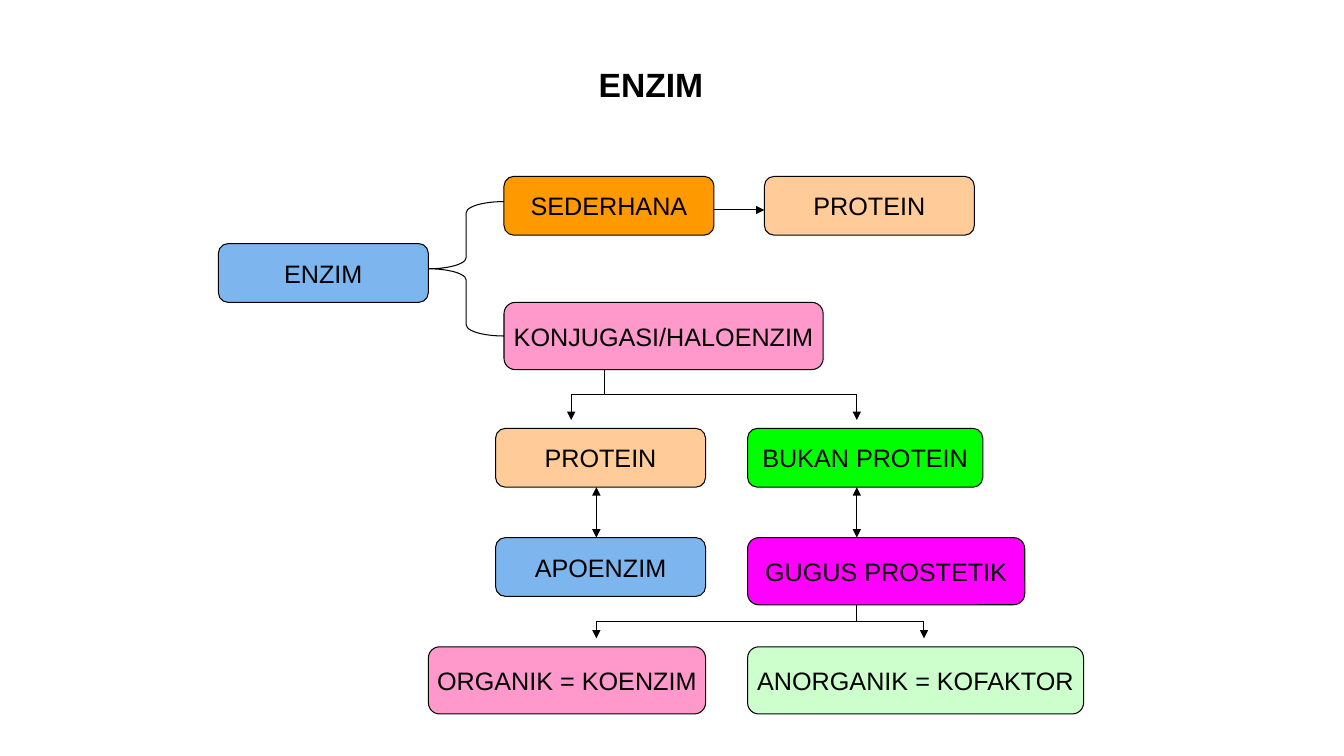
from typing import NamedTuple

from lxml.etree import SubElement
from pptx import Presentation
from pptx.dml.color import RGBColor
from pptx.enum.shapes import MSO_CONNECTOR, MSO_SHAPE
from pptx.enum.text import MSO_ANCHOR, PP_ALIGN
from pptx.oxml.ns import qn
from pptx.shapes.autoshape import Shape
from pptx.slide import Slide
from pptx.util import Pt

COLORS = {
    "black": "000000",
    "blue": "7DB6EF",
    "orange": "FF9900",
    "pink": "FF99CC",
    "peach": "FFCC99",
    "green": "00FF00",
    "magenta": "FF00FF",
    "mint": "CCFFCC",
}
FONT = "Arial"
LINE_WIDTH = 0.75
LOW, TALL = 42, 48


class Node(NamedTuple):
    text: str
    color: str
    left: float
    top: float
    width: float = 150
    height: float = LOW


class Arrow(NamedTuple):
    start: tuple[float, float]
    end: tuple[float, float]
    head: bool = False
    tail: bool = True


class Fork(NamedTuple):
    """A stem that drops to a bar, with an arrow down from each end of the bar."""
    stem: float
    top: float
    bar: float
    tip: float
    left: float
    right: float


NODES = [
    Node("ENZIM", "blue", 156, 174),
    Node("SEDERHANA", "orange", 360, 126),
    Node("KONJUGASI/HALOENZIM", "pink", 360, 216, 228, TALL),
    Node("PROTEIN", "peach", 546, 126),
    Node("PROTEIN", "peach", 354, 306),
    Node("BUKAN PROTEIN", "green", 534, 306, 168),
    Node("APOENZIM", "blue", 354, 384),
    Node("GUGUS PROSTETIK", "magenta", 534, 384, 198, TALL),
    Node("ORGANIK = KOENZIM", "pink", 306, 462, 198, TALL),
    Node("ANORGANIK = KOFAKTOR", "mint", 534, 462, 240, TALL),
]
ARROWS = [
    Arrow((510, 150), (546, 150)),
    Arrow((426, 348), (426, 384), head=True),
    Arrow((612, 348), (612, 384), head=True),
]
FORKS = [
    Fork(stem=432, top=264, bar=282, tip=300, left=408, right=612),
    Fork(stem=612, top=432, bar=444, tip=456, left=426, right=660),
]


def rgb(name: str) -> RGBColor:
    return RGBColor.from_string(COLORS[name])


def write_text(box: Shape, text: str, size: float, bold: bool = False,
               wrap: bool = False) -> None:
    frame = box.text_frame
    frame.word_wrap = wrap
    frame.vertical_anchor = MSO_ANCHOR.MIDDLE
    para = frame.paragraphs[0]
    para.alignment = PP_ALIGN.CENTER
    span = para.add_run()
    span.text = text
    span.font.name = FONT
    span.font.size = Pt(size)
    span.font.bold = bold
    span.font.color.rgb = rgb("black")


def add_outlined(page: Slide, kind: MSO_SHAPE, left: float, top: float,
                 width: float, height: float) -> Shape:
    shape = page.shapes.add_shape(kind, Pt(left), Pt(top), Pt(width), Pt(height))
    shape.shadow.inherit = False
    shape.line.color.rgb = rgb("black")
    shape.line.width = Pt(LINE_WIDTH)
    return shape


def draw_title(page: Slide, text: str) -> None:
    box = page.shapes.add_textbox(Pt(324), Pt(24), Pt(282), Pt(72))
    write_text(box, text, 24, bold=True, wrap=True)


def draw_node(page: Slide, node: Node) -> None:
    box = add_outlined(page, MSO_SHAPE.FLOWCHART_ALTERNATE_PROCESS,
                       node.left, node.top, node.width, node.height)
    box.fill.solid()
    box.fill.fore_color.rgb = rgb(node.color)
    write_text(box, node.text, 18)


def draw_brace(page: Slide) -> None:
    brace = add_outlined(page, MSO_SHAPE.LEFT_BRACE, 306, 144, 54, 96)
    brace.adjustments[0] = 0.148
    brace.fill.background()


def draw_arrow(page: Slide, arrow: Arrow) -> None:
    connector = page.shapes.add_connector(
        MSO_CONNECTOR.STRAIGHT, *map(Pt, arrow.start + arrow.end))
    connector.line.color.rgb = rgb("black")
    connector.line.width = Pt(LINE_WIDTH)
    properties = connector._element.spPr
    outline = properties.find(qn("a:ln"))
    for tag, shown in (("a:headEnd", arrow.head), ("a:tailEnd", arrow.tail)):
        if shown:
            SubElement(outline, qn(tag), type="triangle")
    SubElement(properties, qn("a:effectLst"))


def draw_fork(page: Slide, fork: Fork) -> None:
    draw_arrow(page, Arrow((fork.stem, fork.top), (fork.stem, fork.bar), tail=False))
    draw_arrow(page, Arrow((fork.left, fork.bar), (fork.right, fork.bar), tail=False))
    for x in (fork.left, fork.right):
        draw_arrow(page, Arrow((x, fork.bar), (x, fork.tip)))


def main() -> None:
    deck = Presentation()
    deck.slide_width, deck.slide_height = Pt(960), Pt(540)
    page = deck.slides.add_slide(deck.slide_layouts[6])
    draw_title(page, "ENZIM")
    for node in NODES:
        draw_node(page, node)
    draw_brace(page)
    for arrow in ARROWS:
        draw_arrow(page, arrow)
    for fork in FORKS:
        draw_fork(page, fork)
    deck.save("out.pptx")


if __name__ == "__main__":
    main()
